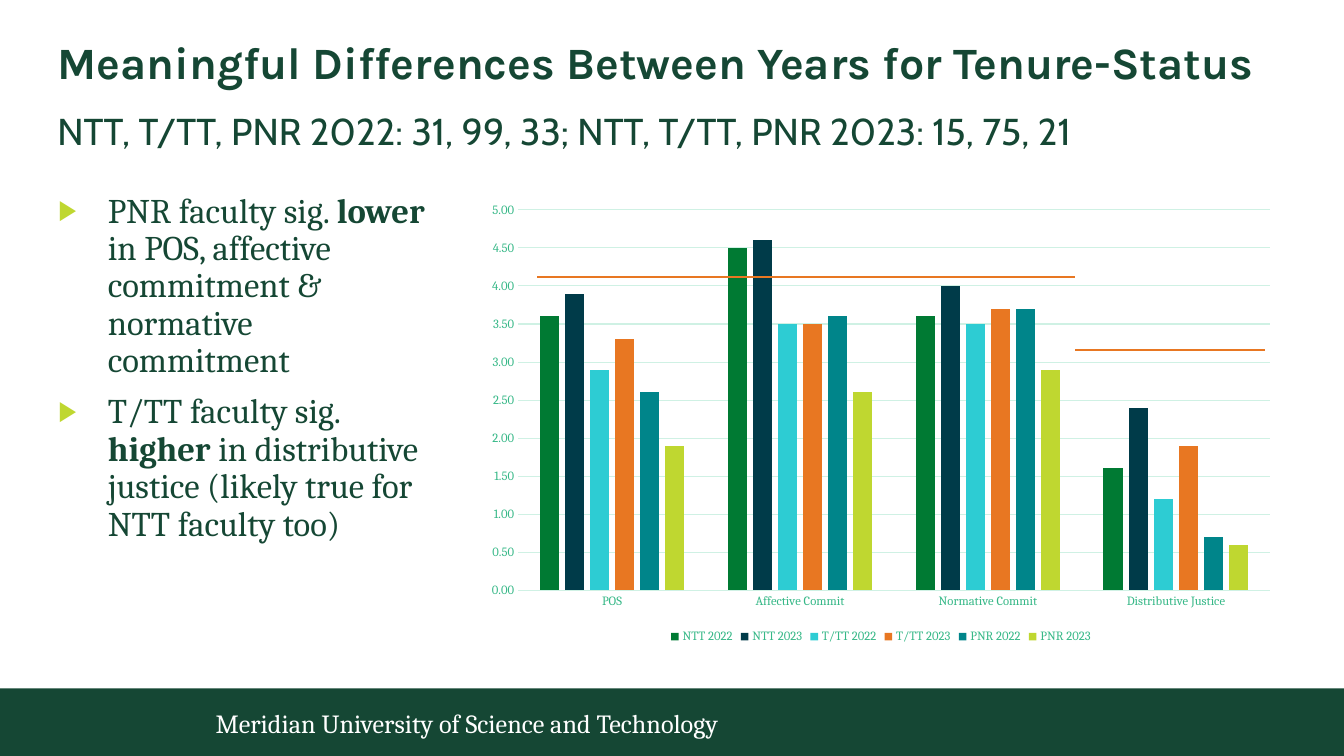
from dataclasses import dataclass

from lxml import etree
from pptx import Presentation
from pptx.chart.data import CategoryChartData
from pptx.dml.color import RGBColor
from pptx.enum.chart import XL_CHART_TYPE as ChartType
from pptx.enum.chart import XL_LEGEND_POSITION as LegendPosition
from pptx.enum.chart import XL_TICK_MARK as TickMark
from pptx.enum.shapes import MSO_CONNECTOR as Connector
from pptx.enum.shapes import MSO_SHAPE as Shape
from pptx.enum.text import MSO_ANCHOR as Anchor
from pptx.enum.text import MSO_AUTO_SIZE as AutoSize
from pptx.enum.text import PP_ALIGN as Align
from pptx.oxml.ns import qn
from pptx.util import Pt


@dataclass(frozen=True)
class Theme:
    green: str = "154734"
    lime: str = "BFD730"
    orange: str = "E87722"
    white: str = "FFFFFF"
    axis_text: str = "36B887"
    grid: str = "CFF1E4"
    title_size: float = 32
    subtitle_size: float = 26.7
    body_size: float = 24.7
    footer_size: float = 18.7
    chart_size: float = 10
    label_size: float = 9
    title_font: str = "Karla"
    subtitle_font: str = "Cabin"
    body_font: str = "Cambria"


THEME = Theme()

MEASURES = ["POS", "Affective Commit", "Normative Commit", "Distributive Justice"]
RATINGS = [
    ("NTT 2022", "007A33", (3.6, 4.5, 3.6, 1.6)),
    ("NTT 2023", "003B49", (3.9, 4.6, 4.0, 2.4)),
    ("T/TT 2022", "2DCCD3", (2.9, 3.5, 3.5, 1.2)),
    ("T/TT 2023", THEME.orange, (3.3, 3.5, 3.7, 1.9)),
    ("PNR 2022", "00858A", (2.6, 3.6, 3.7, 0.7)),
    ("PNR 2023", THEME.lime, (1.9, 2.6, 2.9, 0.6)),
]
# Each finding is a list of (text, is bold) runs
FINDINGS = [
    [("PNR faculty sig. ", False), ("lower", True),
     (" in POS, affective commitment & normative commitment", False)],
    [("T/TT faculty sig. ", False), ("higher", True),
     (" in distributive justice (likely true for NTT faculty too)", False)],
]


def apply(target, values):
    for name, value in values.items():
        setattr(target, name, value)


def rgb(color):
    return RGBColor.from_string(color)


def style_font(font, face, size, color, bold=False):
    apply(font, {"name": face, "size": Pt(size), "bold": bold})
    font.color.rgb = rgb(color)


def place(shape, left, top, width, height):
    apply(shape, {"left": Pt(left), "top": Pt(top),
                  "width": Pt(width), "height": Pt(height)})


def prepare_frame(frame, inset=0, anchor=Anchor.TOP):
    apply(frame, {"word_wrap": True, "auto_size": AutoSize.NONE,
                  "vertical_anchor": anchor})
    apply(frame, {f"margin_{side}": Pt(inset)
                  for side in ("left", "right", "top", "bottom")})


def write_line(shape, text, face, size, color, bold=False, spacing=None,
               **frame_format):
    prepare_frame(shape.text_frame, **frame_format)
    line = shape.text_frame.paragraphs[0]
    apply(line, {"alignment": Align.LEFT, **(spacing or {})})
    run = line.add_run()
    run.text = text
    style_font(run.font, face, size, color, bold)


def add_text_box(slide, *box):
    return slide.shapes.add_textbox(*map(Pt, box))


def add_bullet(paragraph):
    properties = paragraph._p.get_or_add_pPr()
    apply_indent = {"marL": Pt(36), "indent": Pt(-35.3)}
    for name, value in apply_indent.items():
        properties.set(name, str(int(value)))
    color = etree.SubElement(properties, qn("a:buClr"))
    etree.SubElement(color, qn("a:srgbClr"), val=THEME.lime)
    etree.SubElement(properties, qn("a:buSzPct"), val="80000")
    etree.SubElement(properties, qn("a:buFont"), typeface="Arial")
    etree.SubElement(properties, qn("a:buChar"), char="▶")


def add_findings(slide, *box):
    frame = add_text_box(slide, *box).text_frame
    prepare_frame(frame)
    for index, finding in enumerate(FINDINGS):
        paragraph = frame.add_paragraph() if index else frame.paragraphs[0]
        apply(paragraph, {"line_spacing": 0.9, "space_before": Pt(5),
                          "space_after": Pt(5), "alignment": Align.LEFT})
        add_bullet(paragraph)
        for text, bold in finding:
            run = paragraph.add_run()
            run.text = text
            style_font(run.font, THEME.body_font, THEME.body_size,
                       THEME.green, bold)


def add_footer_band(slide, *box):
    band = slide.shapes.add_shape(Shape.RECTANGLE, *map(Pt, box))
    band.shadow.inherit = False
    band.fill.solid()
    band.fill.fore_color.rgb = rgb(THEME.green)
    band.line.fill.background()


def style_line(line, color, width):
    line.color.rgb = rgb(color)
    line.width = Pt(width)


def add_ratings_chart(slide, *box):
    ratings = CategoryChartData(number_format="#,##0.00")
    ratings.categories = MEASURES
    for name, _, values in RATINGS:
        ratings.add_series(name, values)
    chart = slide.shapes.add_chart(
        ChartType.COLUMN_CLUSTERED, *map(Pt, box), ratings).chart
    style_font(chart.font, THEME.body_font, THEME.chart_size, THEME.green)
    apply(chart, {"has_title": False, "has_legend": True})
    apply(chart.legend, {"position": LegendPosition.BOTTOM,
                         "include_in_layout": False})

    # Columns
    columns = chart.plots[0]
    apply(columns, {"gap_width": 219, "overlap": -27, "vary_by_categories": False})
    for series, (_, color, _) in zip(columns.series, RATINGS):
        series.format.fill.solid()
        series.format.fill.fore_color.rgb = rgb(color)

    # Axes and small labels
    measures, scores = chart.category_axis, chart.value_axis
    for axis in (measures, scores):
        apply(axis, {"major_tick_mark": TickMark.NONE,
                     "minor_tick_mark": TickMark.NONE})
    for font in (measures.tick_labels.font, scores.tick_labels.font,
                 chart.legend.font):
        style_font(font, THEME.body_font, THEME.label_size, THEME.axis_text)
    apply(scores, {"minimum_scale": 0, "maximum_scale": 5, "major_unit": 0.5})
    apply(scores.tick_labels, {"number_format": "#,##0.00",
                               "number_format_is_linked": False})
    scores.format.line.fill.background()
    for line in (measures.format.line, scores.major_gridlines.format.line):
        style_line(line, THEME.grid, 0.75)


def add_marker_line(slide, start, end, height):
    marker = slide.shapes.add_connector(
        Connector.STRAIGHT, Pt(start), Pt(height), Pt(end), Pt(height))
    style_line(marker.line, THEME.orange, 1.5)
    etree.SubElement(marker._element.spPr, qn("a:effectLst"))


def main():
    deck = Presentation()
    apply(deck, {"slide_width": Pt(960), "slide_height": Pt(540)})
    slide = deck.slides.add_slide(deck.slide_layouts[5])

    # Headings
    title = slide.shapes.title
    place(title, 41, 28.8, 877.7, 41.8)
    write_line(title, "Meaningful Differences Between Years for Tenure-Status",
               THEME.title_font, THEME.title_size, THEME.green, bold=True,
               spacing={"line_spacing": 0.9})
    subtitle = add_text_box(slide, 41, 77, 877.7, 32.4)
    write_line(subtitle,
               "NTT, T/TT, PNR 2022: 31, 99, 33; NTT, T/TT, PNR 2023: 15, 75, 21",
               THEME.subtitle_font, THEME.subtitle_size, THEME.green,
               spacing={"space_before": Pt(4), "space_after": Pt(4)})

    # Findings beside the chart
    add_findings(slide, 41, 138.2, 270, 324.7)
    add_ratings_chart(slide, 339.8, 138.2, 578.9, 324.7)
    add_marker_line(slide, 768.2, 903.6, 249.8)
    add_marker_line(slide, 383.8, 768.2, 198)

    # Footer
    add_footer_band(slide, -3.6, 491.6, 964, 49)
    institution = add_text_box(slide, 146.9, 497.5, 609.8, 38.2)
    write_line(institution, "Meridian University of Science and Technology",
               THEME.body_font, THEME.footer_size, THEME.white,
               inset=7.2, anchor=Anchor.MIDDLE)

    deck.save("out.pptx")


if __name__ == "__main__":
    main()
